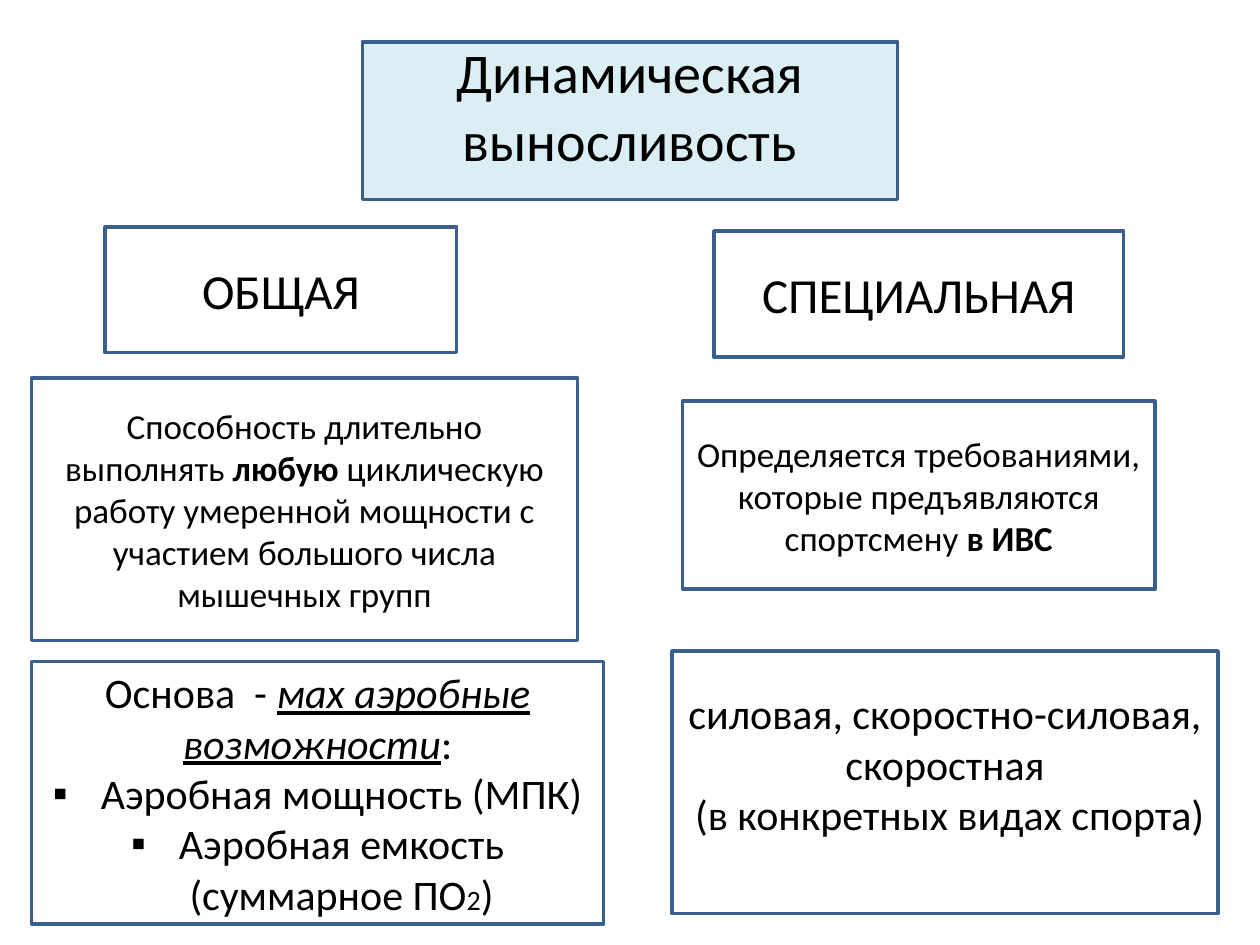
from dataclasses import dataclass

from lxml import etree
from pptx import Presentation
from pptx.dml.color import RGBColor
from pptx.enum.shapes import MSO_SHAPE
from pptx.enum.text import MSO_ANCHOR, MSO_AUTO_SIZE, PP_ALIGN
from pptx.oxml.ns import qn
from pptx.util import Inches, Pt

RECTANGLE = MSO_SHAPE.RECTANGLE
MIDDLE = MSO_ANCHOR.MIDDLE
NO_AUTOFIT = MSO_AUTO_SIZE.NONE
CENTER = PP_ALIGN.CENTER

GRID_UNIT = 1 / 12
TITLE_AND_CONTENT = 1
BULLET = "▪"
BULLET_INDENT = 0.38


@dataclass(frozen=True)
class Theme:
    """Colours and type sizes of the slide."""

    font: str = "Calibri"
    ink: RGBColor = RGBColor(0x00, 0x00, 0x00)
    paper: RGBColor = RGBColor(0xFF, 0xFF, 0xFF)
    accent: RGBColor = RGBColor(0xDB, 0xEE, 0xF4)
    border: RGBColor = RGBColor(0x3A, 0x5F, 0x8C)
    border_width: Pt = Pt(2)
    title: Pt = Pt(32)
    heading: Pt = Pt(28)
    detail: Pt = Pt(24)
    definition: Pt = Pt(20)
    index: Pt = Pt(16)


THEME = Theme()
BOLD = {"bold": True}
KEY_TERM = {"italic": True, "underline": True}
SMALL_INDEX = {"size": THEME.index}

TITLE = [["Динамическая выносливость"]]
BASIS = [
    ["Основа  - ", ("мах аэробные возможности", KEY_TERM), ":"],
    ["Аэробная мощность (МПК)"],
    ["Аэробная емкость (суммарное ПО", ("2", SMALL_INDEX), ")"],
]
BOXES = [
    ((10, 21.6, 33.5, 12), THEME.heading, [["ОБЩАЯ"]], {}),
    ((68, 22, 39, 12), THEME.heading, [["СПЕЦИАЛЬНАЯ"]], {}),
    ((3, 36, 52, 25), THEME.definition,
     [["Способность длительно выполнять ", ("любую", BOLD),
       " циклическую работу умеренной мощности с участием большого числа мышечных групп"]], {}),
    ((65, 38.2, 45, 17.9), THEME.definition,
     [["Определяется требованиями, которые предъявляются спортсмену ", ("в ИВС", BOLD)]], {}),
    ((64, 62, 52, 25), THEME.detail,
     [["силовая, скоростно-силовая, скоростная"], [" (в конкретных видах спорта) "]],
     {"margin_bottom": Inches(0.35)}),
]


def set_attributes(target, values):
    """Apply a dict of format values to an object."""
    for name, value in values.items():
        setattr(target, name, value)


def place(box, cell):
    """Position a box by column, row, column span and row span."""
    edges = ("left", "top", "width", "height")
    set_attributes(box, {edge: Inches(units * GRID_UNIT) for edge, units in zip(edges, cell)})


def paint(box, fill):
    """Give a box its fill and border."""
    box.fill.solid()
    box.fill.fore_color.rgb = fill
    box.line.color.rgb = THEME.border
    box.line.width = THEME.border_width


def write(box, paragraphs, size, frame_format):
    """Fill a box with centred paragraphs of formatted runs."""
    frame = box.text_frame
    set_attributes(frame, {"word_wrap": True, "auto_size": NO_AUTOFIT,
                           "vertical_anchor": MIDDLE, **frame_format})
    for number, parts in enumerate(paragraphs):
        paragraph = frame.add_paragraph() if number else frame.paragraphs[0]
        set_attributes(paragraph, {"alignment": CENTER, "space_before": Pt(0)})
        for part in parts:
            text, emphasis = (part, {}) if isinstance(part, str) else part
            run = paragraph.add_run()
            run.text = text
            set_attributes(run.font, {"name": THEME.font, "size": size, **emphasis})
            run.font.color.rgb = THEME.ink


def set_bullet(paragraph, char=None):
    """Give a paragraph a hanging bullet, or none at all."""
    properties = paragraph._p.get_or_add_pPr()
    indent = Inches(BULLET_INDENT) if char else 0
    properties.set("marL", str(indent))
    properties.set("indent", str(-indent))
    if char:
        etree.SubElement(properties, qn("a:buChar")).set("char", char)
    else:
        etree.SubElement(properties, qn("a:buNone"))


def fill_title(slide):
    """Format the title placeholder as the top box."""
    title = slide.shapes.title
    place(title, (34.5, 4, 51, 15))
    paint(title, THEME.accent)
    write(title, TITLE, THEME.title, {"margin_top": 0, "margin_bottom": Inches(0.25)})


def fill_basis(slide):
    """Format the body placeholder as the bulleted basis box."""
    basis = slide.placeholders[1]
    place(basis, (3, 63, 54.5, 25))
    paint(basis, THEME.paper)
    write(basis, BASIS, THEME.detail, {})
    lead, *abilities = basis.text_frame.paragraphs
    set_bullet(lead)
    for ability in abilities:
        set_bullet(ability, BULLET)


def add_box(slide, cell, size, paragraphs, frame_format):
    """Add a bordered rectangle with centred text."""
    box = slide.shapes.add_shape(RECTANGLE, 0, 0, 0, 0)
    box.shadow.inherit = False
    place(box, cell)
    paint(box, THEME.paper)
    write(box, paragraphs, size, frame_format)


def main():
    """Build and save the slide."""
    deck = Presentation()
    set_attributes(deck, {"slide_width": Inches(10), "slide_height": Inches(7.5)})
    slide = deck.slides.add_slide(deck.slide_layouts[TITLE_AND_CONTENT])
    fill_title(slide)
    fill_basis(slide)
    for box in BOXES:
        add_box(slide, *box)
    deck.save("out.pptx")


if __name__ == "__main__":
    main()
